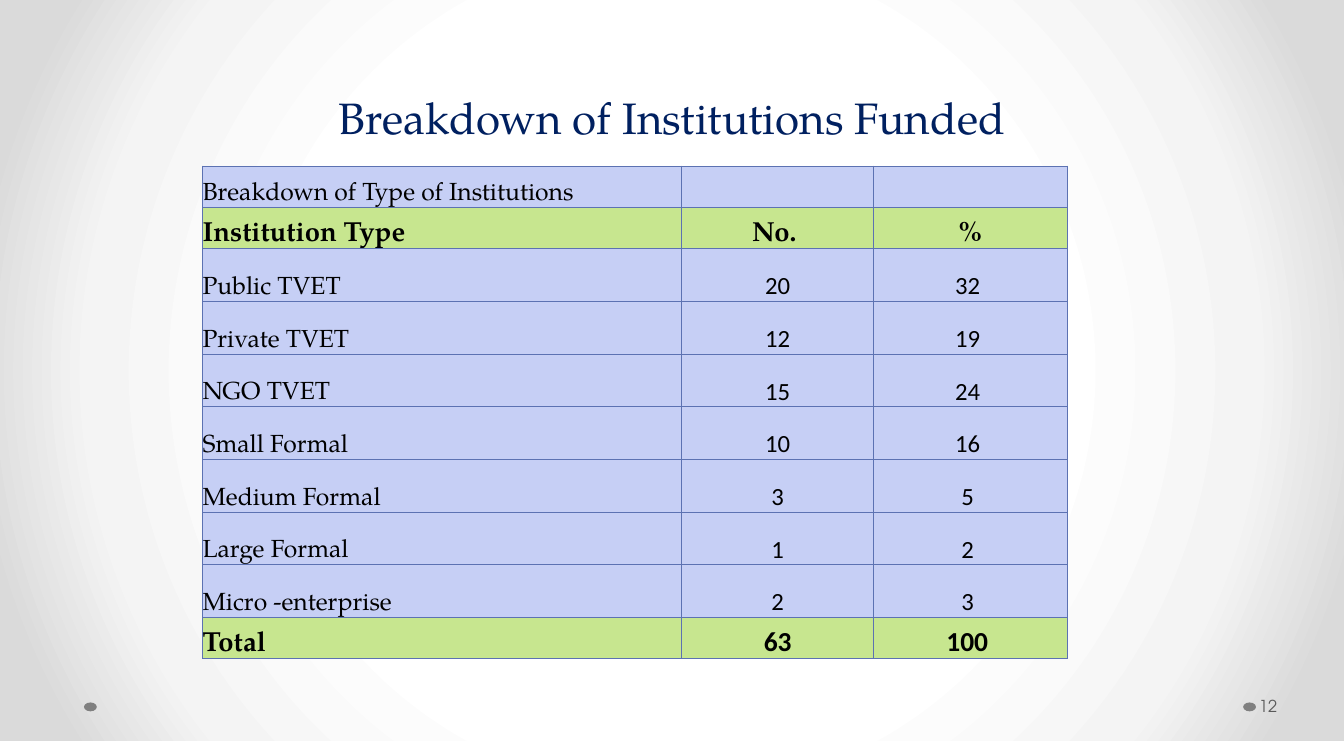
from typing import NamedTuple

import pptx
import pptx.dml.color
import pptx.enum.shapes
import pptx.enum.text
import pptx.oxml
import pptx.oxml.ns
import pptx.util

Inches = pptx.util.Inches
Pt = pptx.util.Pt
RGBColor = pptx.dml.color.RGBColor
Align = pptx.enum.text.PP_ALIGN
Anchor = pptx.enum.text.MSO_ANCHOR

NAVY = RGBColor(0x00, 0x20, 0x60)
BLACK = RGBColor(0x00, 0x00, 0x00)
DARK_GREY = RGBColor(0x59, 0x59, 0x59)
GREY = RGBColor(0x80, 0x80, 0x80)
BLUE = RGBColor(0x5C, 0x72, 0xB2)
LAVENDER = RGBColor(0xC6, 0xCF, 0xF5)
GREEN = RGBColor(0xC7, 0xE6, 0x8F)

SERIF = "TeX Gyre Pagella"
SANS = "TeX Gyre Adventor"
NUMBERS = "Calibri"


class Row(NamedTuple):
    texts: tuple[str, str, str]
    strong: bool = False
    number_font: str = NUMBERS


ROWS = [
    Row(("Breakdown of Type of Institutions", "", ""), number_font=SERIF),
    Row(("Institution Type", "No. ", " % "), True, SERIF),
    Row(("Public TVET", "20", "32 ")),
    Row(("Private TVET", "12", "19 ")),
    Row(("NGO TVET", "15", "24 ")),
    Row(("Small Formal", "10", "16 ")),
    Row(("Medium Formal", "3", "5 ")),
    Row(("Large Formal", "1", "2 ")),
    Row(("Micro -enterprise", "2", "3 ")),
    Row(("Total", "63", "100 "), True),
]
COLUMN_WIDTHS = (4.85, 1.94, 1.96)
TABLE_HEIGHT = 4.99
SHORT_ROW = 0.42
SHORT_ROWS = (0, 1, len(ROWS) - 1)
TALL_ROW = (TABLE_HEIGHT - SHORT_ROW * len(SHORT_ROWS)) / (len(ROWS) - len(SHORT_ROWS))
BACKGROUND_STOPS = ((50, "FFFFFF"), (76, "F4F4F4"), (92, "DADADA"))


def set_background(s: pptx.slide.Slide) -> None:
    stops = "".join(
        f'<a:gs pos="{pos * 1000}"><a:srgbClr val="{color}"/></a:gs>'
        for pos, color in BACKGROUND_STOPS
    )
    bg = pptx.oxml.parse_xml(
        f'<p:bg {pptx.oxml.ns.nsdecls("p", "a")}><p:bgPr>'
        f'<a:gradFill rotWithShape="1"><a:gsLst>{stops}</a:gsLst>'
        '<a:path path="circle"><a:fillToRect l="50000" t="50000" r="50000" b="50000"/></a:path>'
        "</a:gradFill><a:effectLst/></p:bgPr></p:bg>"
    )
    s.element.find(pptx.oxml.ns.qn("p:cSld")).insert(0, bg)


def add_run(p, text: str, font: str, size: int, color: RGBColor, bold: bool = False) -> None:
    r = p.add_run()
    r.text = text
    r.font.name = font
    r.font.size = Pt(size)
    r.font.bold = bold
    r.font.color.rgb = color


def add_dot(s: pptx.slide.Slide, left: float) -> None:
    sp = s.shapes.add_shape(
        pptx.enum.shapes.MSO_SHAPE.OVAL, Inches(left), Inches(7.11), Inches(0.13), Inches(0.09)
    )
    sp.shadow.inherit = False
    sp.fill.solid()
    sp.fill.fore_color.rgb = GREY
    sp.line.fill.background()


def add_title(s: pptx.slide.Slide) -> None:
    sp = s.shapes.title
    sp.left, sp.top, sp.width, sp.height = Inches(0.8), Inches(0), Inches(12), Inches(1.5)
    tf = sp.text_frame
    tf.vertical_anchor = Anchor.BOTTOM
    p = tf.paragraphs[0]
    p.alignment = Align.CENTER
    p.line_spacing = Pt(58)
    add_run(p, "Breakdown of Institutions Funded", SERIF, 32, NAVY)


def add_page_number(s: pptx.slide.Slide) -> None:
    tf = s.shapes.add_textbox(Inches(12.71), Inches(6.95), Inches(0.84), Inches(0.4)).text_frame
    tf.word_wrap = True
    tf.vertical_anchor = Anchor.MIDDLE
    tf.margin_left = Inches(0.03)
    tf.margin_right = tf.margin_top = tf.margin_bottom = Inches(0.05)
    add_run(tf.paragraphs[0], "12", SANS, 12, DARK_GREY)


def set_borders(cell) -> None:
    tc_pr = cell._tc.get_or_add_tcPr()
    for side in ("lnL", "lnR", "lnT", "lnB"):
        tc_pr.append(pptx.oxml.parse_xml(
            f'<a:{side} {pptx.oxml.ns.nsdecls("a")} w="{Pt(0.75)}">'
            f'<a:solidFill><a:srgbClr val="{BLUE}"/></a:solidFill></a:{side}>'
        ))


def fill_cell(cell, row: Row, column: int) -> None:
    set_borders(cell)
    cell.fill.solid()
    cell.fill.fore_color.rgb = GREEN if row.strong else LAVENDER
    cell.vertical_anchor = Anchor.BOTTOM
    font = row.number_font if column else SERIF
    margin = Inches(0.01 if font == NUMBERS else 0)
    cell.margin_left = cell.margin_right = cell.margin_top = margin
    cell.margin_bottom = Inches(0)
    p = cell.text_frame.paragraphs[0]
    p.alignment = Align.CENTER if column else Align.LEFT
    if row.texts[column]:
        add_run(p, row.texts[column], font, 20 if row.strong else 18, BLACK, row.strong)


def add_institutions(s: pptx.slide.Slide) -> None:
    table = s.shapes.add_table(
        len(ROWS), len(COLUMN_WIDTHS), Inches(2.05), Inches(1.68),
        Inches(sum(COLUMN_WIDTHS)), Inches(TABLE_HEIGHT),
    ).table
    table.first_row = table.horz_banding = False
    for column, width in zip(table.columns, COLUMN_WIDTHS):
        column.width = Inches(width)
    for i, row in enumerate(ROWS):
        table.rows[i].height = Inches(SHORT_ROW if i in SHORT_ROWS else TALL_ROW)
        for j in range(len(COLUMN_WIDTHS)):
            fill_cell(table.cell(i, j), row, j)


def main() -> None:
    prs = pptx.Presentation()
    prs.slide_width, prs.slide_height = Inches(13.6), Inches(7.5)
    s = prs.slides.add_slide(prs.slide_layouts[5])
    set_background(s)
    for left in (12.58, 0.85):
        add_dot(s, left)
    add_title(s)
    add_page_number(s)
    add_institutions(s)
    prs.save("out.pptx")


if __name__ == "__main__":
    main()
